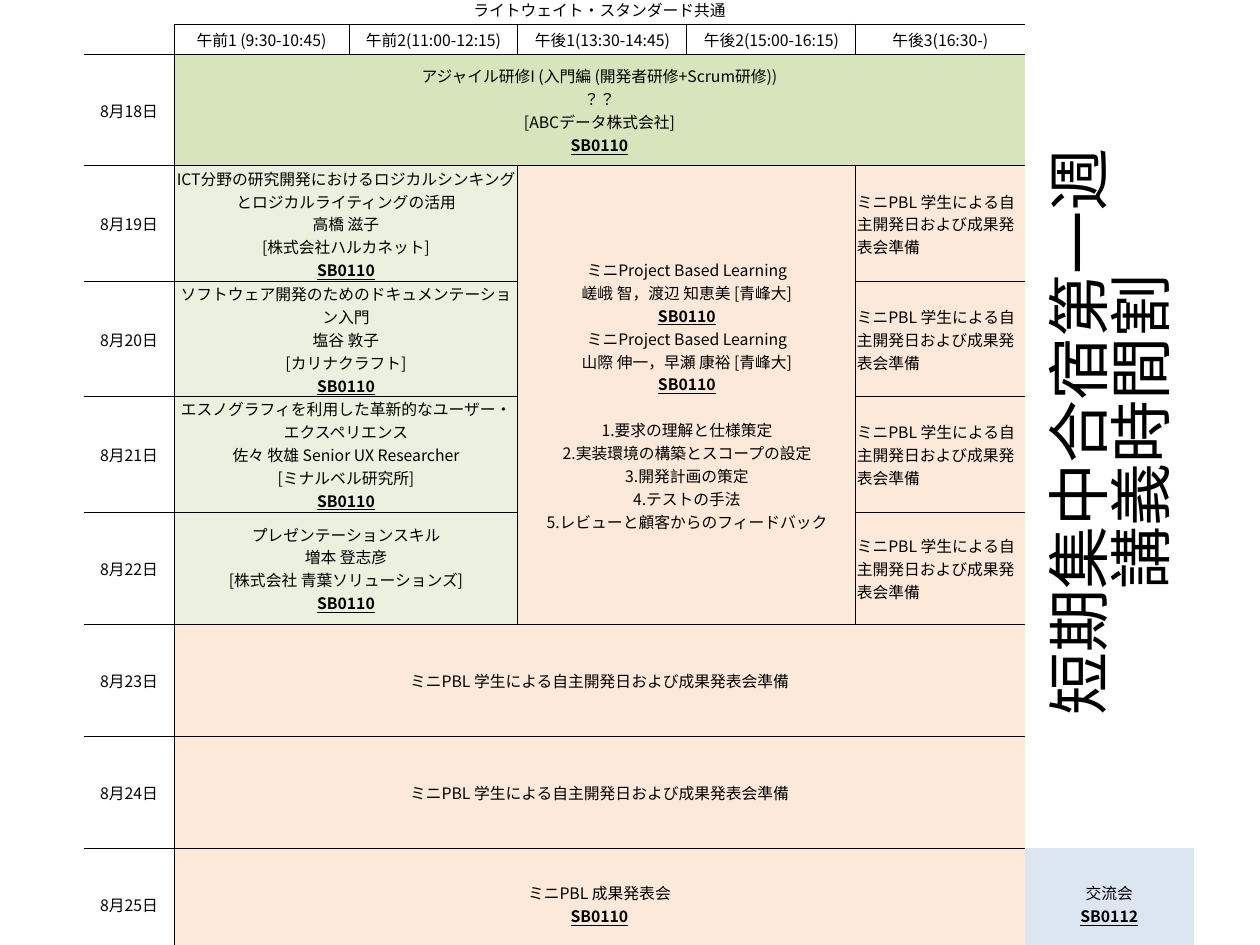
from dataclasses import dataclass

from lxml import etree
from pptx import Presentation
from pptx import util as u
from pptx.dml.color import RGBColor
from pptx.enum import text
from pptx.oxml import ns


@dataclass(frozen=True)
class Theme:
    font: str = "Noto Sans CJK JP"
    ink: str = "000000"
    agile: str = "D8E4BC"
    lecture: str = "EBF1DE"
    project: str = "FDE9D9"
    social: str = "DCE6F1"
    body: int = 9
    title: int = 36
    gap: int = 13
    line: float = 0.5


theme = Theme()
SCALE = 914400 / 126
NO_STYLE = "{2D5ABB26-0587-4C30-8999-92F81FD0307C}"


def px(length):
    return u.Emu(round(length * SCALE))


def write(frame, content, size=theme.body, align=text.PP_ALIGN.CENTER, spacing=None):
    for index, line in enumerate(content.split("\n")):
        para = frame.add_paragraph() if index else frame.paragraphs[0]
        para.alignment = align
        para.line_spacing = spacing
        if not line:
            end = etree.SubElement(para._p, ns.qn("a:endParaRPr"))
            end.set("sz", str(size * 100))
            continue
        if line.startswith("1."):
            para.space_before = u.Pt(theme.gap)
        span = para.add_run()
        span.text = line
        span.font.size = u.Pt(size)
        span.font.name = theme.font
        span.font.color.rgb = RGBColor.from_string(theme.ink)
        span.font.bold = span.font.underline = line.startswith("SB")
        east = etree.SubElement(span.font._element, ns.qn("a:ea"))
        east.set("typeface", theme.font)


deck = Presentation()
deck.slide_width, deck.slide_height = px(1260), px(945)
page = deck.slides.add_slide(deck.slide_layouts[6])

widths = [90, 175] + [169] * 5
heights = [30, 30] + [112] * 8
holder = page.shapes.add_table(
    len(heights), len(widths), px(84), px(-6), px(sum(widths)), px(sum(heights))
)
table = holder.table
table.first_row = table.horz_banding = False
table._tbl.tblPr.find(ns.qn("a:tableStyleId")).text = NO_STYLE
for column, width in zip(table.columns, widths):
    column.width = px(width)
for row, height in zip(table.rows, heights):
    row.height = px(height)

self_study = "ミニPBL 学生による自主開発日および成果発表会準備"
lectures = [
    "ICT分野の研究開発におけるロジカルシンキングとロジカルライティングの活用\n"
    "高橋 滋子\n[株式会社ハルカネット]\nSB0110",
    "ソフトウェア開発のためのドキュメンテーション入門\n塩谷 敦子\n[カリナクラフト]\nSB0110",
    "エスノグラフィを利用した革新的なユーザー・エクスペリエンス\n"
    "佐々 牧雄 Senior UX Researcher\n[ミナルベル研究所]\nSB0110",
    "プレゼンテーションスキル\n増本 登志彦\n[株式会社 青葉ソリューションズ]\nSB0110",
]
project = (
    "ミニProject Based Learning\n嵯峨 智，渡辺 知恵美 [青峰大]\nSB0110\n"
    "ミニProject Based Learning\n山際 伸一，早瀬 康裕 [青峰大]\nSB0110\n"
    "1.要求の理解と仕様策定\n2.実装環境の構築とスコープの設定\n3.開発計画の策定\n"
    "4.テストの手法\n5.レビューと顧客からのフィードバック"
)
agile = "アジャイル研修I (入門編 (開発者研修+Scrum研修))\n？？\n[ABCデータ株式会社]\nSB0110"
periods = [
    "午前1 (9:30-10:45)",
    "午前2(11:00-12:15)",
    "午後1(13:30-14:45)",
    "午後2(15:00-16:15)",
    "午後3(16:30-)",
]

entries = {
    (0, 1): ("ライトウェイト・スタンダード共通", None, (1, 5)),
    (2, 1): (agile, theme.agile, (1, 5)),
    (3, 3): (project, theme.project, (4, 2)),
    (7, 1): (self_study, theme.project, (1, 5)),
    (8, 1): (self_study, theme.project, (1, 5)),
    (9, 1): ("ミニPBL 成果発表会\nSB0110", theme.project, (1, 5)),
    (9, 6): ("交流会\nSB0112", theme.social, (1, 1)),
}
for c, period in enumerate(periods, 1):
    entries[1, c] = (period, None, (1, 1))
for r in range(2, 10):
    entries[r, 0] = (f"8月{16 + r}日", None, (1, 1))
for r, lecture in enumerate(lectures, 3):
    entries[r, 1] = (lecture, theme.lecture, (1, 2))
    entries[r, 5] = (self_study, theme.project, (1, 1))

lecture_rows = range(3, 7)
rules_across = {
    (y, c)
    for y in range(1, 10)
    for c in range(6)
    if (y, c) != (1, 0) and not (y in range(4, 7) and c in (3, 4))
}
rules_down = {(r, 1) for r in range(1, 10)}
rules_down |= {(1, x) for x in range(2, 6)}
rules_down |= {(r, x) for r in lecture_rows for x in (3, 5)}

for r in range(len(heights)):
    for c in range(len(widths)):
        cell = table.cell(r, c)
        content, color, (tall, wide) = entries.get((r, c), ("", None, (1, 1)))
        if (tall, wide) != (1, 1):
            cell.merge(table.cell(r + tall - 1, c + wide - 1))
        cell.margin_left = cell.margin_right = cell.margin_top = px(1)
        cell.margin_bottom = 0
        cell.vertical_anchor = text.MSO_ANCHOR.MIDDLE
        left_aligned = c == 5 and r in lecture_rows
        align = text.PP_ALIGN.LEFT if left_aligned else text.PP_ALIGN.CENTER
        write(cell.text_frame, content, align=align)

        edges = {
            "lnL": (r, c) in rules_down,
            "lnR": (r, c + wide) in rules_down,
            "lnT": (r, c) in rules_across,
            "lnB": (r + tall, c) in rules_across,
        }
        properties = cell._tc.get_or_add_tcPr()
        for tag, drawn in edges.items():
            edge = etree.SubElement(properties, ns.qn(f"a:{tag}"))
            if drawn:
                edge.set("w", str(u.Pt(theme.line)))
                paint = etree.SubElement(edge, ns.qn("a:solidFill"))
                etree.SubElement(paint, ns.qn("a:srgbClr")).set("val", theme.ink)
            else:
                etree.SubElement(edge, ns.qn("a:noFill"))
        if color:
            cell.fill.solid()
            cell.fill.fore_color.rgb = RGBColor.from_string(color)
        else:
            cell.fill.background()

title = page.shapes.add_textbox(px(727), px(384), px(775), px(97))
title.rotation = 270
title.text_frame.word_wrap = True
title.text_frame.vertical_anchor = text.MSO_ANCHOR.MIDDLE
write(title.text_frame, "短期集中合宿第一週\n講義時間割", size=theme.title, spacing=0.82)

deck.save("out.pptx")
